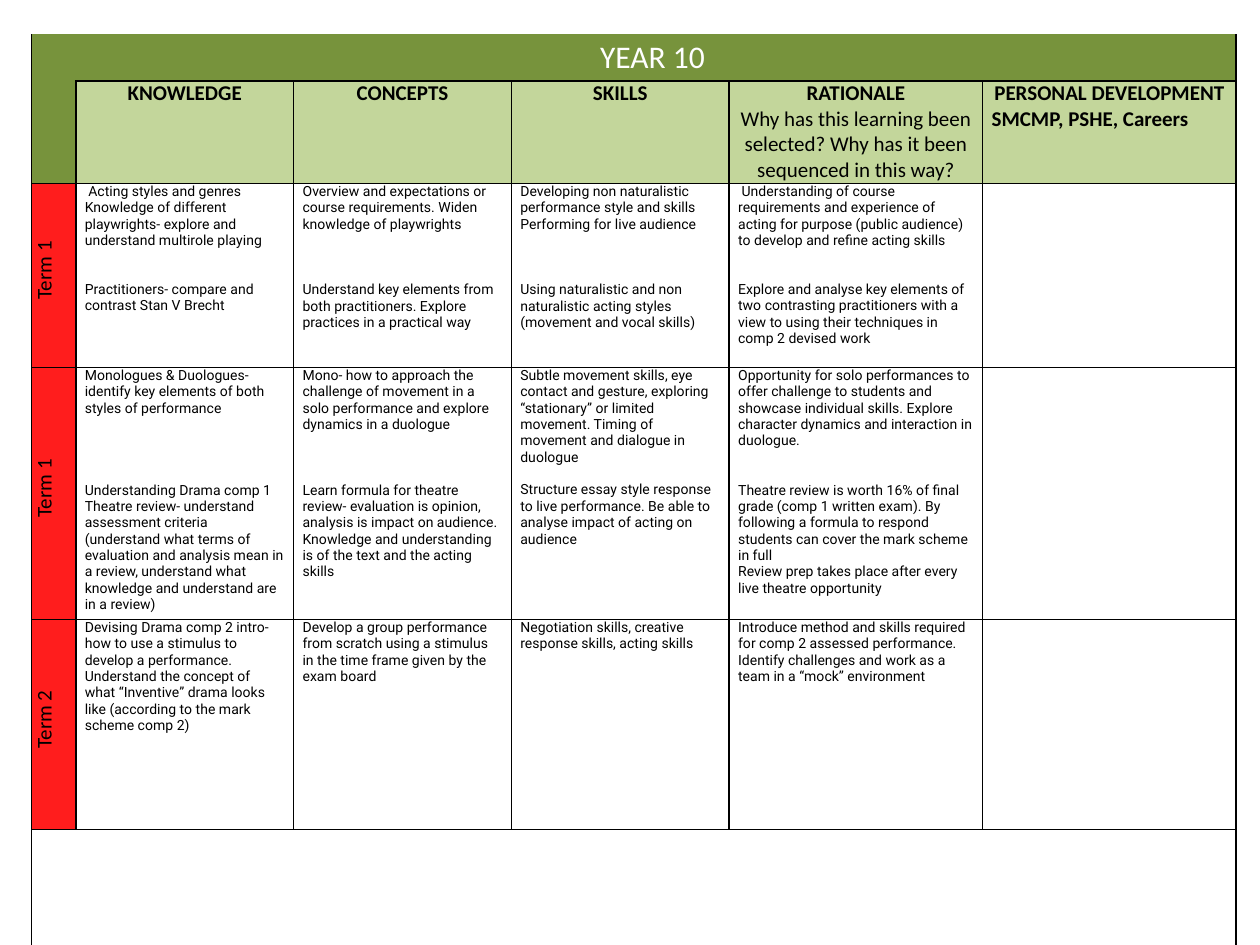
"""Build the Year 10 drama curriculum slide as one table."""
from lxml.etree import SubElement
from pptx import Presentation
from pptx.dml.color import RGBColor
from pptx.enum.text import MSO_ANCHOR as Anchor, PP_ALIGN as Align
from pptx.oxml.ns import qn
from pptx.util import Cm, Pt

COLOURS = {
    "year": "77933C",
    "heading": "C3D69B",
    "term": "FF1D1D",
    "body": "FFFFFF",
    "ink": "000000",
    "year_text": "FFFFFF",
}
BODY_LINE = 9.38
SIDES = "LRTB"

HEADINGS = [
    ["KNOWLEDGE"],
    ["CONCEPTS"],
    ["SKILLS"],
    ["RATIONALE", "Why has this learning been selected? Why has it been sequenced in this way?"],
    ["PERSONAL DEVELOPMENT", "SMCMP, PSHE, Careers"],
]

TERMS = [
    ("Term 1", [
        [(0, " Acting styles and genres"),
         (0, "Knowledge of different playwrights- explore and understand multirole playing"),
         (2, "Practitioners- compare and contrast Stan V Brecht")],
        [(0, "Overview and expectations or course requirements. Widen knowledge of playwrights"),
         (3, "Understand key elements from both practitioners. Explore practices in a practical way")],
        [(0, "Developing non naturalistic performance style and skills"),
         (0, "Performing for live audience"),
         (3, "Using naturalistic and non naturalistic acting styles (movement and vocal skills)")],
        [(0, " Understanding of course requirements and experience of acting for purpose "
             "(public audience) to develop and refine acting skills"),
         (2, "Explore and analyse key elements of two contrasting practitioners with a view "
             "to using their techniques in comp 2 devised work")],
    ]),
    ("Term 1", [
        [(0, "Monologues & Duologues- identify key elements of both styles of performance"),
         (4, "Understanding Drama comp 1 Theatre review- understand assessment criteria "
             "(understand what terms of evaluation and analysis mean in a review, "
             "understand what knowledge and understand are in a review)")],
        [(0, "Mono- how to approach the challenge of movement in a solo performance "
             "and explore dynamics in a duologue"),
         (3, "Learn formula for theatre review- evaluation is opinion, analysis is impact on "
             "audience. Knowledge and understanding is of the text and the acting skills")],
        [(0, "Subtle movement skills, eye contact and gesture, exploring “stationary” or "
             "limited movement. Timing of movement and dialogue in duologue"),
         (1, "Structure essay style response to live performance. "
             "Be able to analyse impact of acting on audience")],
        [(0, "Opportunity for solo performances to offer challenge to students and showcase "
             "individual skills. Explore character dynamics and interaction in duologue."),
         (2, "Theatre review is worth 16% of final grade (comp 1 written exam). By following "
             "a formula to respond students can cover the mark scheme in full"),
         (0, "Review prep takes place after every live theatre opportunity")],
    ]),
    ("Term 2", [
        [(0, "Devising Drama comp 2 intro- how to use a stimulus to develop a performance. "
             "Understand the concept of what “Inventive” drama looks like "
             "(according to the mark scheme comp 2)")],
        [(0, "Develop a group performance from scratch using a stimulus "
             "in the time frame given by the exam board")],
        [(0, "Negotiation skills, creative response skills, acting skills")],
        [(0, "Introduce method and skills required for comp 2 assessed performance. "
             "Identify challenges and work as a team in a “mock” environment")],
    ]),
]


def style_cell(cell, fill=None, borders=SIDES):
    cell.margin_left = cell.margin_right = Cm(0.18)
    cell.margin_top = cell.margin_bottom = 0
    properties = cell._tc.get_or_add_tcPr()
    for side in SIDES:
        line = SubElement(properties, qn(f"a:ln{side}"), w=str(Pt(1)))
        if side in borders:
            paint = SubElement(line, qn("a:solidFill"))
            SubElement(paint, qn("a:srgbClr"), val=COLOURS["ink"])
        else:
            SubElement(line, qn("a:noFill"))
    if fill:
        cell.fill.solid()
        cell.fill.fore_color.rgb = RGBColor.from_string(COLOURS[fill])
    else:
        cell.fill.background()


def write(paragraph, text, size, font="Calibri", colour="ink", bold=False, align=Align.LEFT):
    paragraph.text = text
    paragraph.alignment = align
    for run in paragraph.runs:
        run.font.size = Pt(size)
        run.font.name = font
        run.font.bold = bold
        run.font.color.rgb = RGBColor.from_string(COLOURS[colour])


deck = Presentation()
deck.slide_width, deck.slide_height = Cm(25.4), Cm(19.05)
slide = deck.slides.add_slide(deck.slide_layouts[6])

widths = [0.89, 4.39, 4.39, 4.39, 5.11, 5.11]
heights = [0.94, 2.04, 3.71, 5.08, 4.24, 3.58]
plan = slide.shapes.add_table(
    len(heights), len(widths), Cm(0.64), Cm(0.69), Cm(sum(widths)), Cm(sum(heights))
).table
plan.first_row = plan.horz_banding = False
for column, width in zip(plan.columns, widths):
    column.width = Cm(width)
for row, height in zip(plan.rows, heights):
    row.height = Cm(height)

last = len(widths) - 1
style_cell(plan.cell(0, 0), "year", "LB")
style_cell(plan.cell(1, 0), "year", "LRB")
for column in range(1, last + 1):
    style_cell(plan.cell(0, column), "year", "RB" if column in (1, last) else "B")
    style_cell(plan.cell(1, column), "heading")
for column in range(last + 1):
    style_cell(plan.cell(5, column))
plan.cell(0, 0).merge(plan.cell(1, 0))
plan.cell(0, 1).merge(plan.cell(0, last))
plan.cell(5, 0).merge(plan.cell(5, last))

year = plan.cell(0, 1)
year.vertical_anchor = Anchor.MIDDLE
write(year.text_frame.paragraphs[0], "YEAR 10 ", 18, colour="year_text", align=Align.CENTER)

for column, lines in enumerate(HEADINGS, 1):
    frame = plan.cell(1, column).text_frame
    frame.text = "\n".join(lines)
    for index, (paragraph, text) in enumerate(zip(frame.paragraphs, lines)):
        subtitle_left = index == 1 and column == last
        write(paragraph, text, 12, bold=index == 0 or subtitle_left,
              align=Align.LEFT if subtitle_left else Align.CENTER)

for row, (term, topics) in enumerate(TERMS, 2):
    label = plan.cell(row, 0)
    style_cell(label, "term")
    label.vertical_anchor = Anchor.MIDDLE
    label._tc.get_or_add_tcPr().set("vert", "vert270")
    heading = label.text_frame.paragraphs[0]
    write(heading, term, 12, align=Align.CENTER)
    heading._p.get_or_add_pPr().set("marL", str(Cm(0.2)))
    for column, entries in enumerate(topics + [[]], 1):
        cell = plan.cell(row, column)
        style_cell(cell, "body")
        cell.text_frame.text = "\n".join(text for gap, text in entries)
        for paragraph, (gap, text) in zip(cell.text_frame.paragraphs, entries):
            write(paragraph, text, 8, "Roboto")
            paragraph.space_before = Pt(gap * BODY_LINE)

deck.save("out.pptx")
